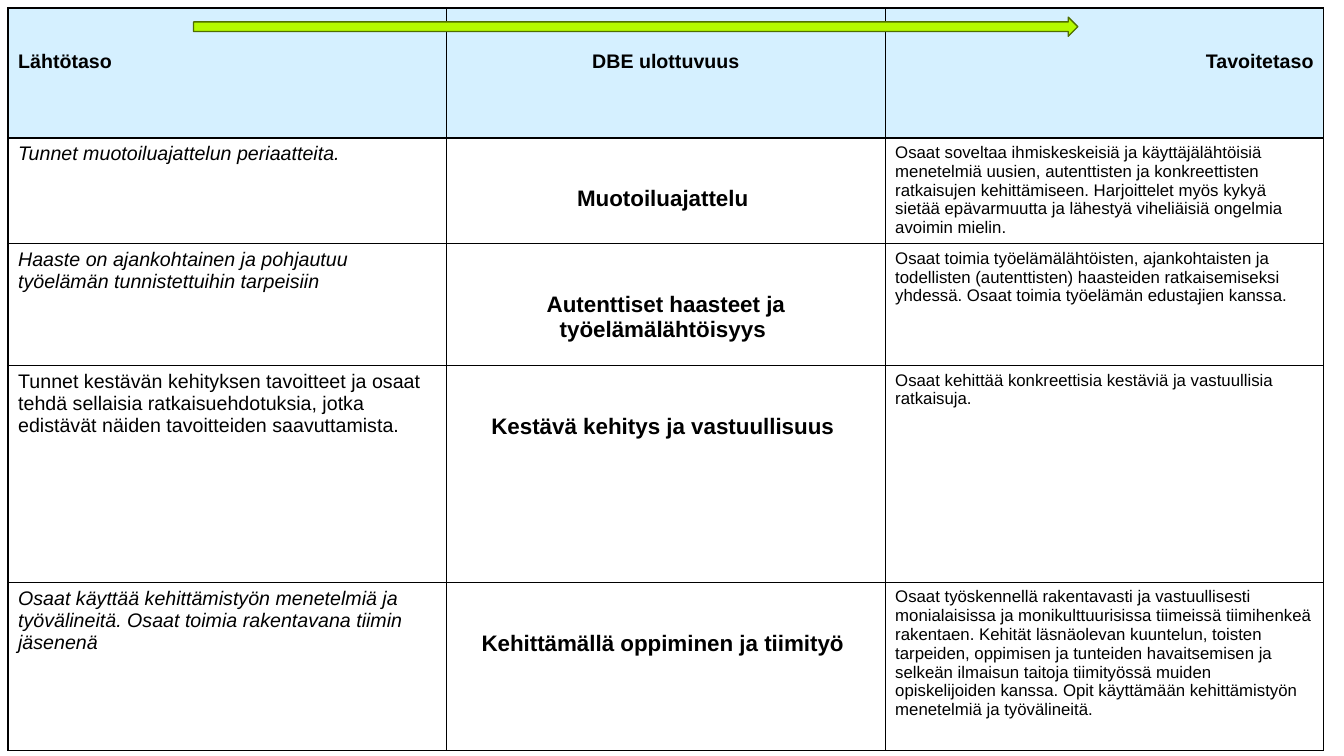
from lxml import etree
from pptx import Presentation
from pptx.dml.color import RGBColor
from pptx.enum.shapes import MSO_SHAPE
from pptx.enum.text import PP_ALIGN
from pptx.oxml.ns import qn
from pptx.util import Inches, Pt

LEFT, CENTER, RIGHT = PP_ALIGN.LEFT, PP_ALIGN.CENTER, PP_ALIGN.RIGHT
ARROW = MSO_SHAPE.RIGHT_ARROW
BLACK, HEADER_BLUE = "000000", "D5F0FF"
ARROW_GREEN, ARROW_EDGE = "B4FA00", "4F6E00"
COLUMN_WIDTH = 4.35
ROW_HEIGHTS = [1.29, 1.05, 1.21, 2.15, 1.67]
TOP_MARGIN, HEADER_MARGIN, DIMENSION_MARGIN = 0.05, 0.42, 0.48

HEADERS = [("Lähtötaso", LEFT), ("DBE ulottuvuus", CENTER), ("Tavoitetaso", RIGHT)]
LEVELS = [
    ("Tunnet muotoiluajattelun periaatteita.", True,
     "Muotoiluajattelu ",
     "Osaat soveltaa ihmiskeskeisiä ja käyttäjälähtöisiä menetelmiä uusien, "
     "autenttisten ja konkreettisten ratkaisujen kehittämiseen. Harjoittelet myös "
     "kykyä sietää epävarmuutta ja lähestyä viheliäisiä ongelmia avoimin mielin. "),
    ("Haaste on ajankohtainen ja pohjautuu työelämän tunnistettuihin tarpeisiin ", True,
     "Autenttiset haasteet ja työelämälähtöisyys ",
     "Osaat toimia työelämälähtöisten, ajankohtaisten ja todellisten (autenttisten) "
     "haasteiden ratkaisemiseksi yhdessä. Osaat toimia työelämän edustajien kanssa."),
    ("Tunnet kestävän kehityksen tavoitteet ja osaat tehdä sellaisia "
     "ratkaisuehdotuksia, jotka edistävät näiden tavoitteiden saavuttamista.", False,
     "Kestävä kehitys ja vastuullisuus ",
     "Osaat kehittää konkreettisia kestäviä ja vastuullisia ratkaisuja."),
    ("Osaat käyttää kehittämistyön menetelmiä ja työvälineitä. Osaat toimia "
     "rakentavana tiimin jäsenenä ", True,
     "Kehittämällä oppiminen ja tiimityö ",
     "Osaat työskennellä rakentavasti ja vastuullisesti monialaisissa ja "
     "monikulttuurisissa tiimeissä tiimihenkeä rakentaen. Kehität läsnäolevan "
     "kuuntelun, toisten tarpeiden, oppimisen ja tunteiden havaitsemisen ja selkeän "
     "ilmaisun taitoja tiimityössä muiden opiskelijoiden kanssa. Opit käyttämään "
     "kehittämistyön menetelmiä ja työvälineitä."),
]


def color(value):
    """Turn a hex string into a colour."""
    return RGBColor.from_string(value)


def add_borders(cell):
    """Draw a thin black line on every side of a cell."""
    properties = cell._tc.get_or_add_tcPr()
    for side in ("a:lnL", "a:lnR", "a:lnT", "a:lnB"):
        line = etree.SubElement(properties, qn(side), w=str(Pt(1)))
        fill = etree.SubElement(line, qn("a:solidFill"))
        etree.SubElement(fill, qn("a:srgbClr"), val=BLACK)


def fill_cell(cell, text, size, bold=False, italic=False, align=LEFT,
              top=TOP_MARGIN, fill=None):
    """Write and format one table cell."""
    add_borders(cell)
    if fill:
        cell.fill.solid()
        cell.fill.fore_color.rgb = color(fill)
    else:
        cell.fill.background()
    cell.margin_top = Inches(top)
    cell.text_frame.text = text
    para = cell.text_frame.paragraphs[0]
    para.alignment = align
    font = para.runs[0].font
    font.name, font.size = "Arial", Pt(size)
    font.bold, font.italic = bold, italic
    font.color.rgb = color(BLACK)


def add_level_table(slide):
    """Add the table of starting levels, dimensions and target levels."""
    table = slide.shapes.add_table(
        len(ROW_HEIGHTS), len(HEADERS), Inches(0.08), Inches(0.08),
        Inches(COLUMN_WIDTH * len(HEADERS)), Inches(sum(ROW_HEIGHTS))).table
    table.first_row = table.horz_banding = False
    for column in table.columns:
        column.width = Inches(COLUMN_WIDTH)
    for row, height in zip(table.rows, ROW_HEIGHTS):
        row.height = Inches(height)
    for index, (text, align) in enumerate(HEADERS):
        fill_cell(table.cell(0, index), text, 14, bold=True, align=align,
                  top=HEADER_MARGIN, fill=HEADER_BLUE)
    for index, (start, italic, dimension, target) in enumerate(LEVELS, 1):
        fill_cell(table.cell(index, 0), start, 14, italic=italic)
        fill_cell(table.cell(index, 1), dimension, 16, bold=True, align=CENTER,
                  top=DIMENSION_MARGIN)
        fill_cell(table.cell(index, 2), target, 12)


def add_progress_arrow(slide):
    """Add the arrow from the starting level to the target level."""
    arrow = slide.shapes.add_shape(ARROW, Inches(1.92), Inches(0.17),
                                   Inches(8.77), Inches(0.19))
    arrow.shadow.inherit = False
    arrow.fill.solid()
    arrow.fill.fore_color.rgb = color(ARROW_GREEN)
    arrow.line.color.rgb = color(ARROW_EDGE)
    arrow.line.width = Pt(1)


def main():
    """Build the slide and save the deck."""
    deck = Presentation()
    deck.slide_width, deck.slide_height = Inches(13.33), Inches(7.5)
    slide = deck.slides.add_slide(deck.slide_layouts[6])
    add_level_table(slide)
    add_progress_arrow(slide)
    deck.save("out.pptx")


if __name__ == "__main__":
    main()
